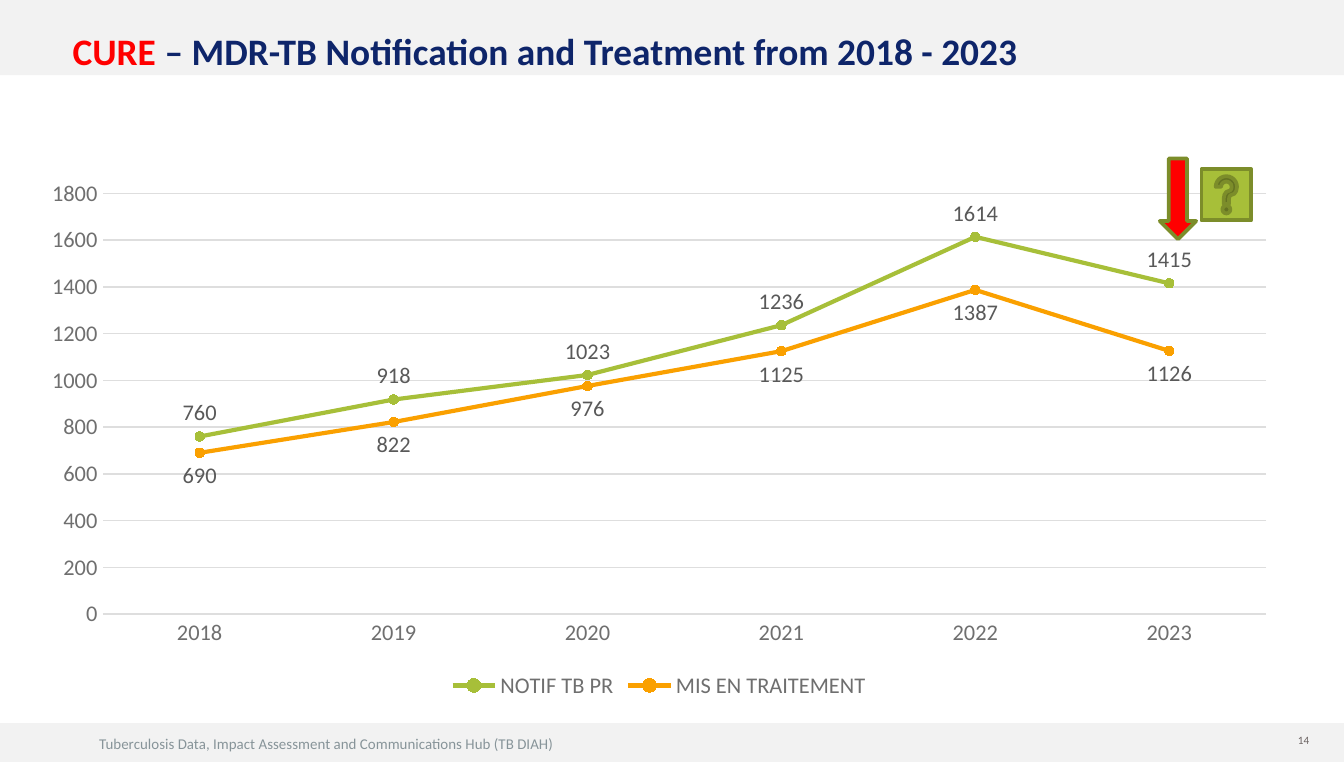
"""Build the slide on MDR-TB notification and treatment from 2018 to 2023."""
import lxml.etree
import pptx
import pptx.chart.data
import pptx.dml.color
import pptx.enum.chart
import pptx.enum.shapes
import pptx.enum.text
import pptx.oxml
import pptx.oxml.ns
import pptx.util

Inches = pptx.util.Inches
Pt = pptx.util.Pt

COLORS = {
    "band": "F2F2F2", "footer": "879499", "number": "6C6463",
    "red": "FF0000", "navy": "0E256A", "text": "222222",
    "axis": "6F6F6F", "grid": "DEDEDE", "label": "595959",
    "green": "A7BF39", "orange": "FAA000", "outline": "7C8D2A",
}
YEARS = ["2018", "2019", "2020", "2021", "2022", "2023"]
NOTIFIED = [760, 918, 1023, 1236, 1614, 1415]
TREATED = [690, 822, 976, 1125, 1387, 1126]
PLOT_FRAME = {"x": 0.06, "y": 0.045, "w": 0.92, "h": 0.787}


class SlideBuilder:
    """Hold the style and the current slide."""

    font_name = "Calibri"

    def __init__(self, slide):
        self.slide = slide

    def rgb(self, color):
        return pptx.dml.color.RGBColor.from_string(COLORS[color])

    def style(self, font, size, color, bold=False):
        font.name = self.font_name
        font.size = Pt(size)
        font.bold = bold
        font.color.rgb = self.rgb(color)

    def shape(self, preset, box, fill, outline=None):
        shape = self.slide.shapes.add_shape(preset, *map(Inches, box))
        shape.shadow.inherit = False
        shape.fill.solid()
        shape.fill.fore_color.rgb = self.rgb(fill)
        if outline:
            shape.line.color.rgb = self.rgb(outline)
            shape.line.width = Pt(2)
        else:
            shape.line.fill.background()

    def text(self, words, box, size, color, align, anchor):
        frame = self.slide.shapes.add_textbox(*map(Inches, box)).text_frame
        frame.word_wrap = True
        frame.vertical_anchor = anchor
        frame.text = words
        frame.paragraphs[0].alignment = align
        self.style(frame.paragraphs[0].runs[0].font, size, color)

    def title(self, parts, box):
        title = self.slide.shapes.title
        title.left, title.top, title.width, title.height = map(Inches, box)
        self.slide.shapes._spTree.append(title._element)
        frame = title.text_frame
        frame.word_wrap = True
        frame.auto_size = pptx.enum.text.MSO_AUTO_SIZE.NONE
        frame.vertical_anchor = pptx.enum.text.MSO_ANCHOR.BOTTOM
        heading = frame.paragraphs[0]
        heading.alignment = pptx.enum.text.PP_ALIGN.LEFT
        for words, color in parts:
            run = heading.add_run()
            run.text = words
            self.style(run.font, 20, color, bold=True)

    def line_chart(self, years, trends, box):
        data = pptx.chart.data.CategoryChartData()
        data.categories = years
        for name, values, _, _ in trends:
            data.add_series(name, values)
        chart = self.slide.shapes.add_chart(
            pptx.enum.chart.XL_CHART_TYPE.LINE_MARKERS, *map(Inches, box), data).chart
        self.style(chart.font, 10, "text")
        chart.has_title = False
        chart.has_legend = True
        chart.legend.position = pptx.enum.chart.XL_LEGEND_POSITION.BOTTOM
        chart.legend.include_in_layout = False
        self.style(chart.legend.font, 12, "axis")
        self.axes(chart)
        chart.plots[0].vary_by_categories = False
        for series, (_, _, color, position) in zip(chart.plots[0].series, trends):
            self.trend(series, color, position)
        self.plot_frame(chart)

    def axes(self, chart):
        for axis in (chart.category_axis, chart.value_axis):
            axis.major_tick_mark = pptx.enum.chart.XL_TICK_MARK.NONE
            axis.minor_tick_mark = pptx.enum.chart.XL_TICK_MARK.NONE
            self.style(axis.tick_labels.font, 12, "axis")
        chart.value_axis.minimum_scale = 0
        chart.value_axis.maximum_scale = 1800
        chart.value_axis.major_unit = 200
        chart.value_axis.format.line.fill.background()
        for part in (chart.category_axis, chart.value_axis.major_gridlines):
            part.format.line.color.rgb = self.rgb("grid")
            part.format.line.width = Pt(0.75)

    def trend(self, series, color, position):
        series.smooth = False
        series.format.line.color.rgb = self.rgb(color)
        series.format.line.width = Pt(2.25)
        series.marker.style = pptx.enum.chart.XL_MARKER_STYLE.CIRCLE
        series.marker.size = 5
        series.marker.format.fill.solid()
        series.marker.format.fill.fore_color.rgb = self.rgb(color)
        series.marker.format.line.color.rgb = self.rgb(color)
        labels = series.data_labels
        labels.show_value = True
        labels.position = position
        self.style(labels.font, 12, "label")

    def plot_frame(self, chart):
        qn = pptx.oxml.ns.qn
        plot_area = chart._chartSpace.chart.plotArea
        for automatic in plot_area.findall(qn("c:layout")):
            plot_area.remove(automatic)
        layout = pptx.oxml.parse_xml(f"<c:layout {pptx.oxml.ns.nsdecls('c')}/>")
        plot_area.insert(0, layout)
        manual = lxml.etree.SubElement(layout, qn("c:manualLayout"))
        settings = {"layoutTarget": "inner", "xMode": "edge", "yMode": "edge", **PLOT_FRAME}
        for tag, value in settings.items():
            lxml.etree.SubElement(manual, qn(f"c:{tag}")).set("val", str(value))


def main():
    deck = pptx.Presentation()
    deck.slide_width, deck.slide_height = Inches(10), Inches(5.67)
    builder = SlideBuilder(deck.slides.add_slide(deck.slide_layouts[5]))
    presets = pptx.enum.shapes.MSO_SHAPE
    align = pptx.enum.text.PP_ALIGN
    anchor = pptx.enum.text.MSO_ANCHOR
    labels = pptx.enum.chart.XL_LABEL_POSITION

    builder.shape(presets.RECTANGLE, (0, 5.38, 10, 0.29), "band")
    builder.text("Tuberculosis Data, Impact Assessment and Communications Hub (TB DIAH)",
                 (0.64, 5.42, 5, 0.24), 8, "footer", align.LEFT, anchor.TOP)
    builder.shape(presets.RECTANGLE, (0, 0, 10, 0.56), "band")
    builder.text("14", (9.14, 5.41, 0.7, 0.2), 6, "number", align.RIGHT, anchor.MIDDLE)
    builder.title([("CURE ", "red"),
                   ("– MDR-TB Notification and Treatment from 2018 - 2023", "navy")],
                  (0.44, 0.15, 9.16, 0.44))
    builder.line_chart(YEARS, [("NOTIF TB PR", NOTIFIED, "green", labels.ABOVE),
                               ("MIS EN TRAITEMENT", TREATED, "orange", labels.BELOW)],
                       (0.2, 1.26, 9.41, 3.98))
    builder.shape(presets.DOWN_ARROW, (8.63, 1.18, 0.27, 0.6), "red", "outline")
    builder.shape(presets.ACTION_BUTTON_HELP, (8.94, 1.26, 0.37, 0.38), "green", "outline")
    deck.save("out.pptx")


if __name__ == "__main__":
    main()
